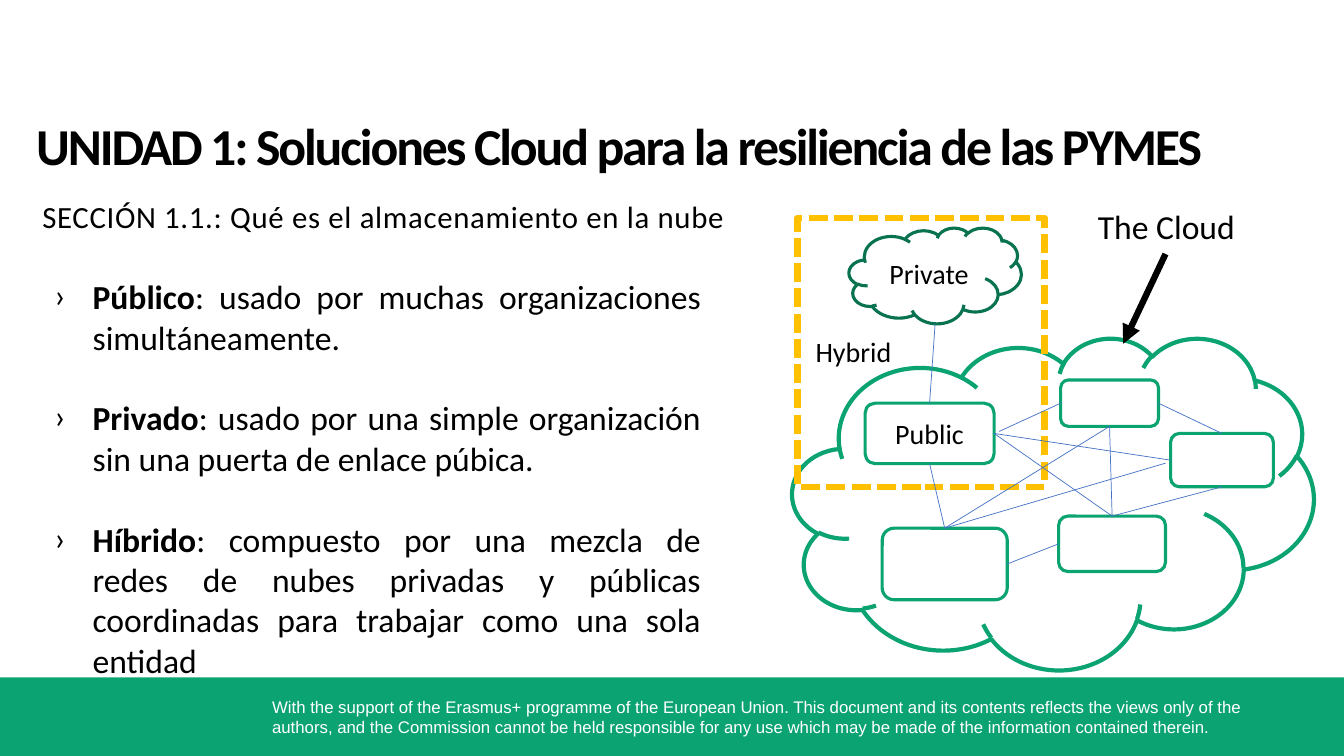
from dataclasses import dataclass
from typing import Optional

from lxml.etree import SubElement
from pptx import Presentation
from pptx.dml.color import RGBColor
from pptx.enum.dml import MSO_LINE
from pptx.enum.shapes import MSO_CONNECTOR, MSO_SHAPE
from pptx.enum.text import MSO_ANCHOR, PP_ALIGN
from pptx.oxml.ns import qn
from pptx.util import Emu, Pt

PX = 9144  # 100 px to the inch
COLORS = {
    "green": "0CA373", "dark_green": "087251", "blue": "4472C4",
    "amber": "FFC000", "black": "000000", "white": "FFFFFF",
}


@dataclass(frozen=True)
class Box:
    left: int
    top: int
    width: int
    height: int

    def emu(self) -> list[Emu]:
        return [px(n) for n in (self.left, self.top, self.width, self.height)]

    def side(self, name: str) -> tuple[float, float]:
        """Return the middle point of the named side."""
        across, down = {"left": (0, 0.5), "right": (1, 0.5),
                        "top": (0.5, 0), "bottom": (0.5, 1)}[name]
        return self.left + across * self.width, self.top + down * self.height


@dataclass(frozen=True)
class Node:
    box: Box
    label: str = ""
    preset: MSO_SHAPE = MSO_SHAPE.ROUNDED_RECTANGLE
    color: str = "green"
    line_width: float = 2.25


@dataclass(frozen=True)
class Link:
    start: str
    start_side: str
    end: str
    end_side: str
    end_shift: tuple[int, int] = (0, 0)


@dataclass(frozen=True)
class Label:
    box: Box
    text: str
    size: float
    color: str = "black"
    font: str = "Calibri"
    bold: bool = False
    tracking: Optional[float] = None
    insets: tuple[int, int, int, int] = (10, 5, 10, 5)


NODES = {
    "cloud": Node(Box(786, 335, 517, 329), preset=MSO_SHAPE.CLOUD, line_width=3),
    "east": Node(Box(1161, 430, 102, 53)),
    "public": Node(Box(858, 400, 128, 60), "Public"),
    "southwest": Node(Box(875, 524, 124, 71)),
    "north": Node(Box(1052, 377, 97, 46)),
    "south": Node(Box(1050, 512, 106, 55)),
    "private": Node(Box(842, 226, 171, 95), "Private", MSO_SHAPE.CLOUD, "dark_green"),
}
LINKS = [
    Link("southwest", "right", "south", "left"),
    Link("south", "top", "east", "bottom"),
    Link("public", "right", "east", "left"),
    Link("north", "right", "east", "top"),
    Link("north", "left", "public", "right", (5, -2)),
    Link("public", "bottom", "southwest", "top"),
    Link("public", "right", "south", "top"),
    Link("public", "top", "private", "bottom"),
    Link("north", "bottom", "southwest", "top"),
    Link("south", "top", "north", "bottom"),
    Link("southwest", "top", "east", "left", (-5, 3)),
]
HYBRID_FRAME = Box(791, 216, 245, 267)
LABELS = [
    Label(Box(260, 686, 1042, 50),
          "With the support of the Erasmus+ programme of the European Union. This document "
          "and its contents reflects the views only of the authors, and the Commission cannot "
          "be held responsible for any use which may be made of the information contained "
          "therein.", 12, "white", "Arial"),
    Label(Box(36, 112, 1196, 64),
          "UNIDAD 1: Soluciones Cloud para la resiliencia de las PYMES",
          37, bold=True, tracking=-1.5, insets=(0, 1, 0, 0)),
    Label(Box(42, 194, 743, 39), "SECCIÓN 1.1.: Qué es el almacenamiento en la nube",
          22, tracking=0.5, insets=(0, 2, 0, 0)),
    Label(Box(1079, 199, 230, 50), "The Cloud", 24),
    Label(Box(799, 327, 101, 44), "Hybrid", 20),
]
DEFINITIONS = [
    ("Público", ": usado por muchas organizaciones simultáneamente."),
    ("Privado", ": usado por una simple organización sin una puerta de enlace púbica."),
    ("Híbrido", ": compuesto por una mezcla de redes de nubes privadas y públicas "
                "coordinadas para trabajar como una sola entidad"),
]


def px(value: float) -> Emu:
    return Emu(round(value * PX))


def rgb(name: str) -> RGBColor:
    return RGBColor.from_string(COLORS[name])


def add_run(paragraph, text: str, size: float, color: str = "black",
            font: str = "Calibri", bold: bool = False):
    run = paragraph.add_run()
    run.text = text
    run.font.name = font
    run.font.size = Pt(size)
    run.font.bold = bold
    run.font.color.rgb = rgb(color)
    return run


def add_text_frame(slide, box: Box, insets: tuple[int, int, int, int] = (10, 5, 10, 5)):
    frame = slide.shapes.add_textbox(*box.emu()).text_frame
    frame.word_wrap = True
    (frame.margin_left, frame.margin_top,
     frame.margin_right, frame.margin_bottom) = map(px, insets)
    return frame


def add_label(slide, label: Label) -> None:
    frame = add_text_frame(slide, label.box, label.insets)
    run = add_run(frame.paragraphs[0], label.text, label.size,
                  label.color, label.font, label.bold)
    if label.tracking is not None:
        run.font._element.set("spc", str(round(label.tracking * 100)))


def add_definitions(slide) -> None:
    frame = add_text_frame(slide, Box(44, 269, 661, 414))
    for index, (term, meaning) in enumerate(DEFINITIONS):
        paragraph = frame.paragraphs[0] if index == 0 else frame.add_paragraph()
        paragraph.alignment = PP_ALIGN.JUSTIFY
        if index:
            paragraph.space_before = Pt(29)
        properties = paragraph._p.get_or_add_pPr()
        properties.set("marL", str(px(38)))
        properties.set("indent", str(px(-38)))
        SubElement(properties, qn("a:buFont"), typeface="Calibri")
        SubElement(properties, qn("a:buChar"), char="›")
        add_run(paragraph, term, 24, bold=True)
        add_run(paragraph, meaning, 24)


def add_node(slide, node: Node) -> None:
    shape = slide.shapes.add_shape(node.preset, *node.box.emu())
    shape.shadow.inherit = False
    shape.fill.solid()
    shape.fill.fore_color.rgb = rgb("white")
    shape.line.color.rgb = rgb(node.color)
    shape.line.width = Pt(node.line_width)
    if node.label:
        frame = shape.text_frame
        frame.vertical_anchor = MSO_ANCHOR.MIDDLE
        frame.paragraphs[0].alignment = PP_ALIGN.CENTER
        add_run(frame.paragraphs[0], node.label, 20)


def add_line(slide, start: tuple[float, float], end: tuple[float, float],
             color: str = "blue", width: float = 0.5, arrow: bool = False) -> None:
    connector = slide.shapes.add_connector(
        MSO_CONNECTOR.STRAIGHT, *map(px, (*start, *end)))
    connector.line.color.rgb = rgb(color)
    connector.line.width = Pt(width)
    if arrow:
        SubElement(connector.line._get_or_add_ln(), qn("a:tailEnd"), type="triangle")
    SubElement(connector._element.spPr, qn("a:effectLst"))


def add_link(slide, link: Link) -> None:
    x, y = NODES[link.end].box.side(link.end_side)
    add_line(slide, NODES[link.start].box.side(link.start_side),
             (x + link.end_shift[0], y + link.end_shift[1]))


def add_footer_band(slide) -> None:
    band = slide.shapes.add_shape(MSO_SHAPE.RECTANGLE, *Box(0, 672, 1333, 78).emu())
    band.shadow.inherit = False
    band.fill.solid()
    band.fill.fore_color.rgb = rgb("green")
    band.line.fill.background()


def add_hybrid_frame(slide) -> None:
    frame = slide.shapes.add_shape(MSO_SHAPE.RECTANGLE, *HYBRID_FRAME.emu())
    frame.shadow.inherit = False
    frame.fill.background()
    frame.line.color.rgb = rgb("amber")
    frame.line.width = Pt(4.5)
    frame.line.dash_style = MSO_LINE.SQUARE_DOT


def main() -> None:
    presentation = Presentation()
    presentation.slide_width, presentation.slide_height = px(1333), px(750)
    slide = presentation.slides.add_slide(presentation.slide_layouts[6])
    add_footer_band(slide)
    add_definitions(slide)
    for node in NODES.values():
        add_node(slide, node)
    add_hybrid_frame(slide)
    for link in LINKS:
        add_link(slide, link)
    for label in LABELS:
        add_label(slide, label)
    add_line(slide, (1156, 252), (1114, 341), "black", 4.5, arrow=True)
    presentation.save("out.pptx")


if __name__ == "__main__":
    main()
